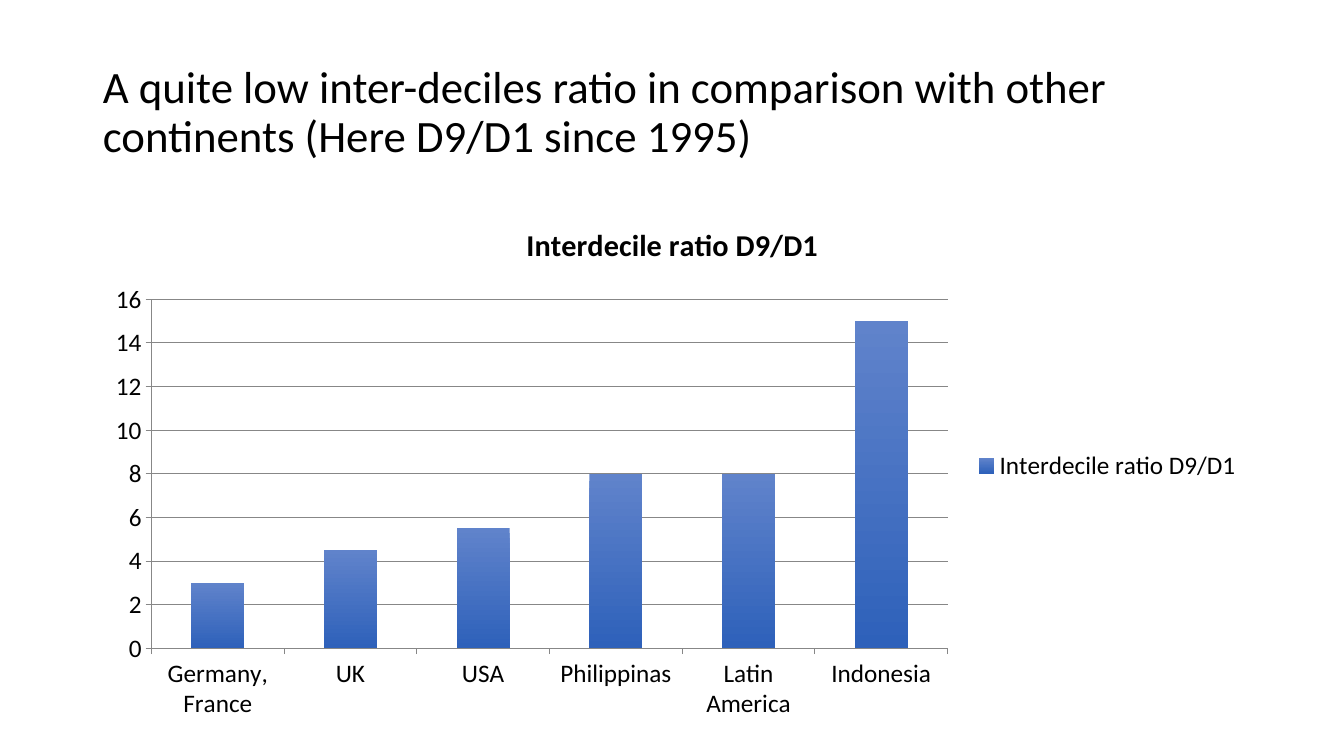
import pptx
import pptx.util
import pptx.dml.color
import pptx.chart.data
import pptx.enum.chart
import pptx.enum.text

WIDE, HIGH = 13.33, 7.5
FACE, INK, RULE = "Calibri", "000000", "878787"
SHADES = ["6083CB", "2E61BA"]
HEAD = ("A quite low inter-deciles ratio in comparison with other "
        "continents (Here D9/D1 since 1995)")
NAME = "Interdecile ratio D9/D1"
RATIOS = {
    "Germany, France": 3,
    "UK": 4.5,
    "USA": 5.5,
    "Philippinas": 8,
    "Latin America": 8,
    "Indonesia": 15,
}
LEFT = 0.92
SPAN = 11.5
BOXES = {"title": (LEFT, 0.4, SPAN, 1.45), "chart": (LEFT, 2, SPAN, 5.24)}


def tint(color, code):
    color.rgb = pptx.dml.color.RGBColor.from_string(code)


def apply(thing, values):
    for key, value in values.items():
        setattr(thing, key, value)


def style(font, size, bold=False):
    apply(font, {"name": FACE, "size": pptx.util.Pt(size), "bold": bold})
    tint(font.color, INK)


def rule(line):
    line.width = pptx.util.Pt(0.75)
    tint(line.color, RULE)


def place(name):
    return [pptx.util.Inches(side) for side in BOXES[name]]


def add_head(slide):
    title = slide.shapes.title
    apply(title, dict(zip(("left", "top", "width", "height"), place("title"))))
    frame = title.text_frame
    frame.text = HEAD
    apply(frame, {
        "word_wrap": True,
        "auto_size": pptx.enum.text.MSO_AUTO_SIZE.NONE,
        "vertical_anchor": pptx.enum.text.MSO_ANCHOR.MIDDLE,
    })
    para = frame.paragraphs[0]
    apply(para, {"alignment": pptx.enum.text.PP_ALIGN.LEFT, "line_spacing": 0.9})
    style(para.runs[0].font, 32)


def add_bars(slide):
    data = pptx.chart.data.CategoryChartData()
    data.categories = list(RATIOS)
    data.add_series(NAME, list(RATIOS.values()))
    kind = pptx.enum.chart.XL_CHART_TYPE.COLUMN_CLUSTERED
    chart = slide.shapes.add_chart(kind, *place("chart"), data).chart
    style(chart.font, 18)
    apply(chart, {"has_title": True, "has_legend": True})
    chart.chart_title.text_frame.text = NAME
    style(chart.chart_title.text_frame.paragraphs[0].runs[0].font, 21.6, True)
    apply(chart.legend, {
        "position": pptx.enum.chart.XL_LEGEND_POSITION.RIGHT,
        "include_in_layout": False,
    })
    for axis in (chart.category_axis, chart.value_axis):
        axis.major_tick_mark = pptx.enum.chart.XL_TICK_MARK.OUTSIDE
        rule(axis.format.line)
    apply(chart.value_axis, {
        "minimum_scale": 0, "maximum_scale": 16, "major_unit": 2,
        "has_major_gridlines": True,
    })
    rule(chart.value_axis.major_gridlines.format.line)
    plot = chart.plots[0]
    apply(plot, {"gap_width": 150, "vary_by_categories": False})
    fill = plot.series[0].format.fill
    fill.gradient()
    fill.gradient_angle = 270
    for stop, code in zip(fill.gradient_stops, SHADES):
        tint(stop.color, code)


def main():
    deck = pptx.Presentation()
    apply(deck, {
        "slide_width": pptx.util.Inches(WIDE),
        "slide_height": pptx.util.Inches(HIGH),
    })
    slide = deck.slides.add_slide(deck.slide_layouts.get_by_name("Title Only"))
    add_head(slide)
    add_bars(slide)
    deck.save("out.pptx")


if __name__ == "__main__":
    main()
